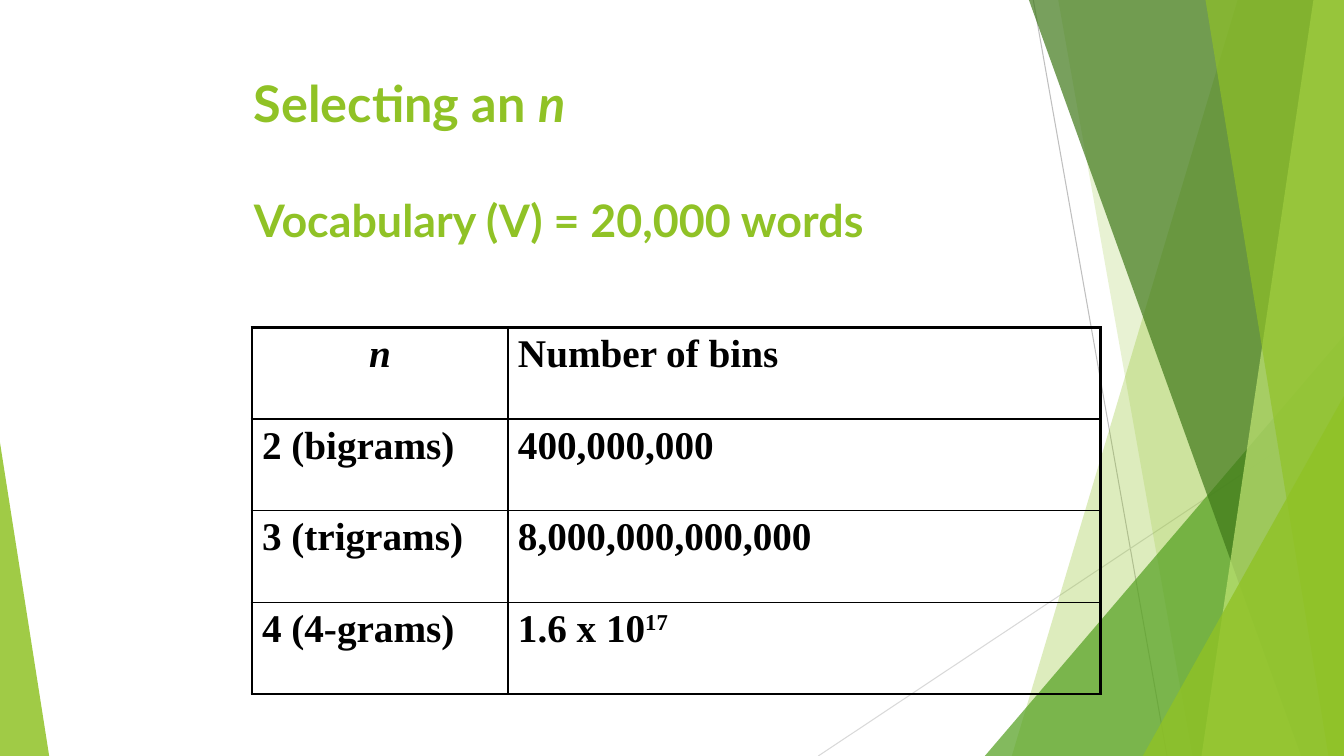
"""Builds the slide on choosing n for an n-gram model."""
from lxml import etree
from pptx import Presentation
from pptx.dml.color import RGBColor
from pptx.enum.shapes import MSO_CONNECTOR, MSO_SHAPE
from pptx.enum.text import MSO_ANCHOR, PP_ALIGN
from pptx.oxml.ns import qn
from pptx.util import Cm, Pt

TRIANGLE = MSO_SHAPE.ISOSCELES_TRIANGLE
STRAIGHT = MSO_CONNECTOR.STRAIGHT
TOP = MSO_ANCHOR.TOP
LEFT, CENTER = PP_ALIGN.LEFT, PP_ALIGN.CENTER

LIME = RGBColor(0x90, 0xC2, 0x26)
PALE_LIME = RGBColor(0xC0, 0xE4, 0x74)
GREEN = RGBColor(0x54, 0xA0, 0x21)
DARK_GREEN = RGBColor(0x3F, 0x78, 0x19)
GRAY = RGBColor(0xBF, 0xBF, 0xBF)
LIGHT_GRAY = RGBColor(0xD9, 0xD9, 0xD9)
BLACK = RGBColor(0, 0, 0)

WIDTH, HEIGHT = 33.87, 19.05
THIN, THICK = 1, 2.25


class SlideBuilder:
    """Holds the style and the current slide."""

    title_font = "Lato"
    table_font = "Times New Roman"

    def __init__(self, slide):
        self.slide = slide
        self.shapes = slide.shapes

    def paint(self, shape, color, opacity):
        """Fill a shape with a translucent colour and no outline."""
        shape.shadow.inherit = False
        shape.fill.solid()
        shape.fill.fore_color.rgb = color
        shape.line.fill.background()
        tint = shape.fill._xPr.find(qn("a:solidFill"))[0]
        etree.SubElement(tint, qn("a:alpha"), val=str(opacity * 1000))

    def line(self, start, end, color):
        """Draw a thin straight line."""
        points = [Cm(v) for v in (*start, *end)]
        line = self.shapes.add_connector(STRAIGHT, *points)
        line.line.color.rgb = color
        line.line.width = Pt(0.75)
        etree.SubElement(line._element.spPr, qn("a:effectLst"))

    def band(self, top_x, bottom_x, color, opacity):
        """Draw a full-height band reaching the right edge of the slide."""
        outline = self.shapes.build_freeform(Cm(top_x), 0)
        corners = [(WIDTH, 0), (WIDTH, HEIGHT), (bottom_x, HEIGHT)]
        outline.add_line_segments([(Cm(x), Cm(y)) for x, y in corners])
        self.paint(outline.convert_to_shape(), color, opacity)

    def corner(self, left, top, width, peak, color, opacity):
        """Draw a right triangle standing on the bottom edge."""
        box = [Cm(v) for v in (left, top, width, HEIGHT - top)]
        triangle = self.shapes.add_shape(TRIANGLE, *box)
        triangle.adjustments[0] = peak
        self.paint(triangle, color, opacity)

    def run(self, paragraph, text, font, size, color, italic=False, raised=False):
        """Add one bold run."""
        run = paragraph.add_run()
        run.text = text
        run.font.name = font
        run.font.size = Pt(size)
        run.font.bold = True
        run.font.italic = italic
        run.font.color.rgb = color
        if raised:
            run.font._element.set("baseline", "30000")

    def title(self, box, lines):
        """Add the heading, one paragraph per line, with a wide gap between."""
        frame = self.shapes.add_textbox(*[Cm(v) for v in box]).text_frame
        frame.word_wrap = True
        frame.vertical_anchor = TOP
        for index, (size, runs) in enumerate(lines):
            paragraph = frame.add_paragraph() if index else frame.paragraphs[0]
            paragraph.space_before = Pt(43 * index)
            for text, italic in runs:
                self.run(paragraph, text, self.title_font, size, LIME, italic)

    def borders(self, cell, widths):
        """Set the left, right, top and bottom borders of a cell."""
        properties = cell._tc.get_or_add_tcPr()
        for side, width in zip("LRTB", widths):
            edge = etree.SubElement(properties, qn(f"a:ln{side}"), w=str(Pt(width)))
            fill = etree.SubElement(edge, qn("a:solidFill"))
            etree.SubElement(fill, qn("a:srgbClr"), val=str(BLACK))

    def table(self, left, top, columns, row_height, rows):
        """Add an unfilled table with a thick frame and thin inner lines."""
        size = (Cm(sum(columns)), Cm(row_height * len(rows)))
        table = self.shapes.add_table(
            len(rows), len(columns), Cm(left), Cm(top), *size).table
        table.first_row = table.horz_banding = False
        for column, width in zip(table.columns, columns):
            column.width = Cm(width)
        last_row, last_column = len(rows) - 1, len(columns) - 1
        for r, row in enumerate(rows):
            for c, runs in enumerate(row):
                cell = table.cell(r, c)
                on_frame = (c == 0, c == last_column, r == 0, r == last_row)
                self.borders(cell, [THICK if edge else THIN for edge in on_frame])
                cell.fill.background()
                paragraph = cell.text_frame.paragraphs[0]
                paragraph.alignment = CENTER if r == c == 0 else LEFT
                for text, style in runs:
                    self.run(paragraph, text, self.table_font, 28, BLACK, **style)


def main():
    """Build and save the slide."""
    deck = Presentation()
    deck.slide_width, deck.slide_height = Cm(WIDTH), Cm(HEIGHT)
    page = SlideBuilder(deck.slides.add_slide(deck.slide_layouts[6]))

    page.line((26.04, 0), (29.41, HEIGHT), GRAY)
    page.line((WIDTH, 10.24), (20.62, HEIGHT), LIGHT_GRAY)
    page.band(31.19, 25.5, LIME, 30)
    page.band(26.67, 30.05, LIME, 20)
    page.corner(24.82, 8.46, 9.05, 1, GREEN, 72)
    page.band(25.93, 32.79, DARK_GREEN, 70)
    page.band(33.1, 30.28, PALE_LIME, 70)
    page.band(30.38, 33.48, LIME, 65)
    page.corner(28.8, 9.98, 5.07, 1, LIME, 80)
    page.corner(0, 11.15, 1.24, 0, LIME, 85)

    page.title((6.15, 1.7, 21.59, 4.65), [
        (36, [("Selecting an ", False), ("n", True)]),
        (32, [("Vocabulary (V) = 20,000 words", False)]),
    ])
    page.table(6.35, 8.25, (6.45, 14.94), 2.31, [
        [[("n", {"italic": True})], [("Number of bins", {})]],
        [[("2 (bigrams)", {})], [("400,000,000", {})]],
        [[("3 (trigrams)", {})], [("8,000,000,000,000", {})]],
        [[("4 (4-grams)", {})], [("1.6 x 10", {}), ("17", {"raised": True})]],
    ])
    deck.save("out.pptx")


if __name__ == "__main__":
    main()
